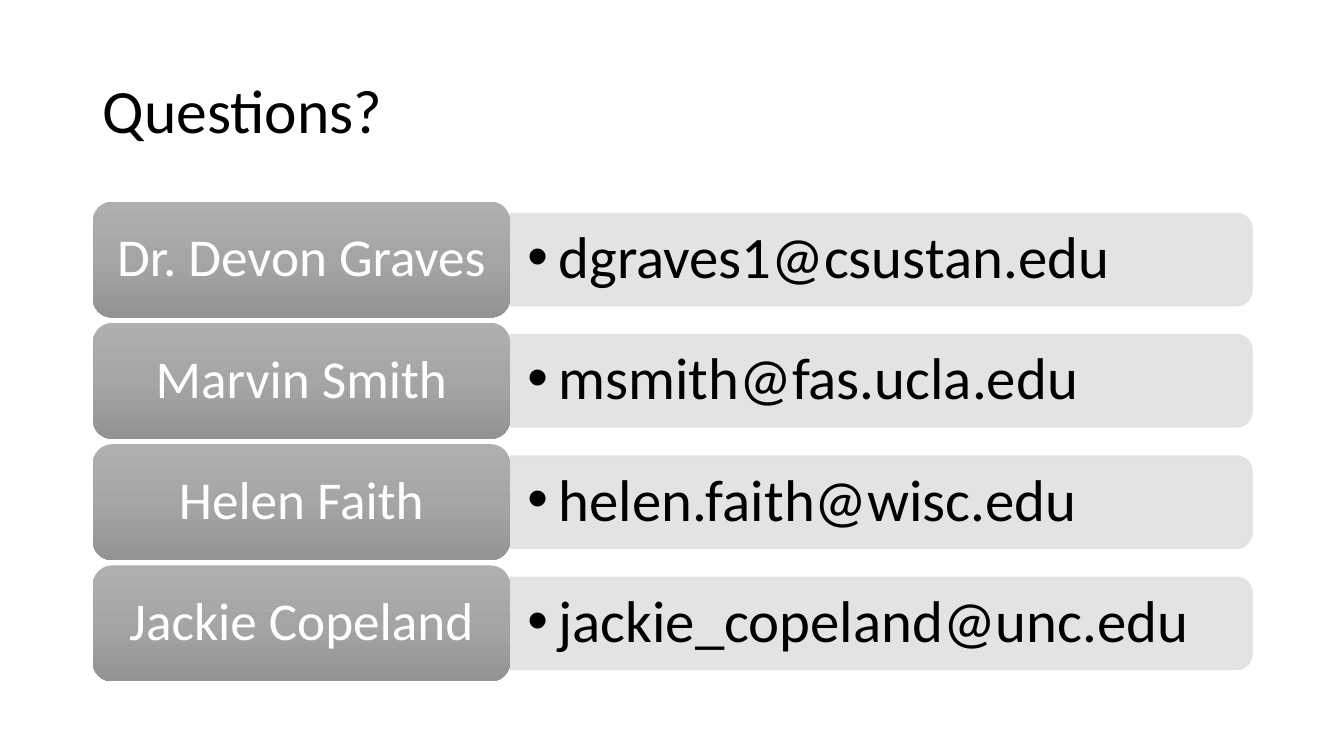
from copy import deepcopy

from lxml.etree import SubElement
from pptx import Presentation
from pptx.dml.color import RGBColor
from pptx.enum.shapes import MSO_SHAPE
from pptx.enum.text import MSO_ANCHOR, PP_ALIGN
from pptx.oxml.ns import qn
from pptx.util import Inches, Pt

COLORS = {
    "text": "000000",
    "name": "FFFFFF",
    "bar": "E1E1E1",
    "card_top": "AFAFAF",
    "card_middle": "A5A5A5",
    "card_bottom": "939393",
}
CONTACTS = [
    ("Dr. Devon Graves", "dgraves1@csustan.edu"),
    ("Marvin Smith", "msmith@fas.ucla.edu"),
    ("Helen Faith", "helen.faith@wisc.edu"),
    ("Jackie Copeland", "jackie_copeland@unc.edu"),
]
CARD_LEFT, CARD_WIDTH, CARD_HEIGHT = 0.92, 4.14, 1.15
FIRST_TOP, LAST_TOP = 2, 5.61
BAR_LENGTH, BAR_THICKNESS = 7.36, 0.92
EMAIL_WIDTH, EMAIL_HEIGHT = 7.32, 0.83


def color(name):
    return RGBColor.from_string(COLORS[name])


def write_text(shape, text, size, color_name, alignment, inset):
    frame = shape.text_frame
    frame.word_wrap = True
    frame.vertical_anchor = MSO_ANCHOR.MIDDLE
    frame.margin_left = frame.margin_right = Inches(inset)
    frame.margin_top = frame.margin_bottom = Inches(inset / 2)
    frame.text = text
    paragraph = frame.paragraphs[0]
    paragraph.alignment = alignment
    paragraph.line_spacing = 0.9
    if alignment is None:
        # Bulleted with a hanging indent
        properties = paragraph._p.get_or_add_pPr()
        properties.set("marL", str(Inches(0.31)))
        properties.set("indent", str(-Inches(0.31)))
        SubElement(properties, qn("a:buFont"), typeface="Arial")
        SubElement(properties, qn("a:buChar"), char="•")
    paragraph.font.size = Pt(size)
    paragraph.font.name = "Calibri"
    paragraph.font.color.rgb = color(color_name)


presentation = Presentation()
presentation.slide_width = Inches(13.33)
presentation.slide_height = Inches(7.5)
slide = presentation.slides.add_slide(presentation.slide_layouts[5])

# Title
title = slide.shapes.title
title.left, title.top = Inches(0.92), Inches(0.4)
title.width, title.height = Inches(11.5), Inches(1.45)
write_text(title, "Questions?", 44, "text", PP_ALIGN.LEFT, 0.1)

# One row for each contact
row_step = (LAST_TOP - FIRST_TOP) / (len(CONTACTS) - 1)
card_right = CARD_LEFT + CARD_WIDTH
for row, (name, email) in enumerate(CONTACTS):
    card_top = FIRST_TOP + row * row_step
    middle = card_top + CARD_HEIGHT / 2

    # Bar, turned so that its rounded end points right
    bar = slide.shapes.add_shape(
        MSO_SHAPE.ROUND_2_SAME_RECTANGLE,
        Inches(card_right + (BAR_LENGTH - BAR_THICKNESS) / 2),
        Inches(middle - BAR_LENGTH / 2),
        Inches(BAR_THICKNESS), Inches(BAR_LENGTH))
    bar.rotation = 90
    bar.shadow.inherit = False
    bar.fill.solid()
    bar.fill.fore_color.rgb = color("bar")
    bar.line.color.rgb = color("bar")
    bar.line.width = Pt(0.5)
    for bar_color in bar._element.spPr.iter(qn("a:srgbClr")):
        SubElement(bar_color, qn("a:alpha"), val="90000")

    # Email address
    email_box = slide.shapes.add_textbox(
        Inches(card_right), Inches(middle - EMAIL_HEIGHT / 2),
        Inches(EMAIL_WIDTH), Inches(EMAIL_HEIGHT))
    write_text(email_box, email, 42, "text", None, 0.17)

    # Name card with a three-stop gradient running down
    card = slide.shapes.add_shape(
        MSO_SHAPE.ROUNDED_RECTANGLE, Inches(CARD_LEFT), Inches(card_top),
        Inches(CARD_WIDTH), Inches(CARD_HEIGHT))
    card.shadow.inherit = False
    card.line.fill.background()
    card.fill.gradient()
    card.fill.gradient_angle = 270
    stop_list = next(card._element.spPr.iter(qn("a:gsLst")))
    stop_list.append(deepcopy(stop_list[0]))
    stop_names = ("card_top", "card_middle", "card_bottom")
    for index, stop in enumerate(card.fill.gradient_stops):
        stop.position = index / 2
        stop.color.rgb = color(stop_names[index])
    write_text(card, name, 38, "name", PP_ALIGN.CENTER, 0.16)

presentation.save("out.pptx")
